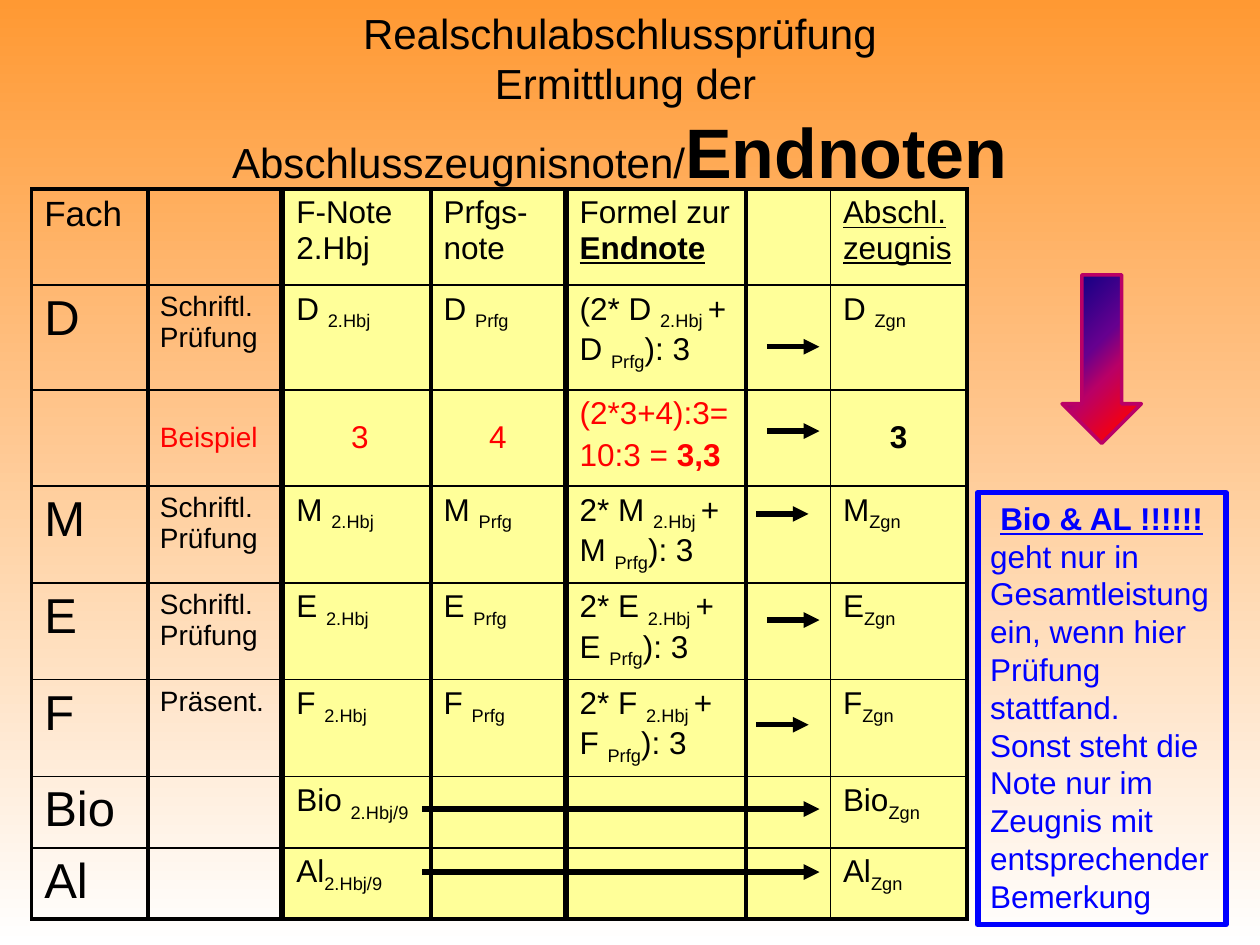
from dataclasses import dataclass, field

from lxml import etree
from pptx import Presentation
from pptx.dml import color as dml
from pptx.enum import shapes, text
from pptx.oxml import ns
from pptx.util import Cm, Pt


@dataclass(frozen=True)
class Theme:
    """Colours, type sizes and line widths of the slide."""
    font: str = "Arial"
    ink: str = "000000"
    example: str = "FF0000"
    note: str = "0000FF"
    cell: str = "FFFF99"
    arrow_edge: str = "BA0066"
    sky: tuple = ((0, "FF9933"), (100, "FFFFFF"))
    fire: tuple = ((0, "000082"), (42, "66008F"), (59, "BA0066"), (90, "FF0000"), (100, "FF8200"))
    title: int = 24
    title_big: int = 40
    subject: int = 28
    heading: int = 20
    body: int = 18
    exam: int = 16
    frame: float = 2.25
    grid: float = 1
    flow: float = 3


THEME = Theme()


@dataclass(frozen=True)
class Box:
    """A region measured in centimetres."""
    left: float
    top: float
    width: float
    height: float

    def lengths(self):
        """Return the four sides as lengths."""
        return Cm(self.left), Cm(self.top), Cm(self.width), Cm(self.height)


@dataclass(frozen=True)
class Entry:
    """Text of one cell; parts between underscores get the emphasis."""
    content: str = ""
    size: int = THEME.body
    color: str = THEME.ink
    centred: bool = False
    middle: bool = False
    bold: bool = False
    underline: bool = False
    emphasis: dict = field(default_factory=lambda: {"subscript": True})


def rgb(value):
    """Turn a hex string into a colour."""
    return dml.RGBColor.from_string(value)


def style(font, size, color, bold=False, underline=False):
    """Set the face, size and colour of a font."""
    font.name, font.size, font.bold, font.underline = THEME.font, Pt(size), bold, underline
    font.color.rgb = rgb(color)


def paint_gradient(fill, stops, angle):
    """Fill with a linear gradient running clockwise at the angle."""
    fill.gradient()
    fill.gradient_angle = 360 - angle
    stop_list = fill._fill._gradFill.find(ns.qn("a:gsLst"))
    for old in list(stop_list):
        stop_list.remove(old)
    for position, value in stops:
        stop = etree.SubElement(stop_list, ns.qn("a:gs"), pos=str(position * 1000))
        etree.SubElement(stop, ns.qn("a:srgbClr"), val=value)


def add_border(cell, side, width):
    """Draw one side of a cell."""
    line = etree.SubElement(cell._tc.get_or_add_tcPr(), ns.qn(f"a:ln{side}"), w=str(Pt(width)))
    fill = etree.SubElement(line, ns.qn("a:solidFill"))
    etree.SubElement(fill, ns.qn("a:srgbClr"), val=THEME.ink)


def write_entry(cell, entry):
    """Write the paragraphs and emphasised runs of an entry into a cell."""
    if entry.middle:
        cell.vertical_anchor = text.MSO_ANCHOR.MIDDLE
    frame = cell.text_frame
    for number, content in enumerate(entry.content.split("\n")):
        paragraph = frame.add_paragraph() if number else frame.paragraphs[0]
        paragraph.alignment = text.PP_ALIGN.CENTER if entry.centred else text.PP_ALIGN.LEFT
        paragraph.space_before = Pt(entry.size * 0.2)
        style(paragraph.font, entry.size, entry.color, entry.bold, entry.underline)
        for index, part in enumerate(content.split("_")):
            for line_number, line in enumerate(part.split("\v")):
                if line_number:
                    paragraph.add_line_break()
                if not line:
                    continue
                run = paragraph.add_run()
                run.text = line
                style(run.font, entry.size, entry.color, entry.bold, entry.underline)
                if index % 2:
                    run.font.bold = entry.emphasis.get("bold", entry.bold)
                    run.font.underline = entry.emphasis.get("underline", entry.underline)
                    if "subscript" in entry.emphasis:
                        run._r.get_or_add_rPr().set("baseline", "-25000")


def add_grades(slide, box, widths, heights, columns, color=None):
    """Add a framed table from columns of entries."""
    table = slide.shapes.add_table(len(heights), len(widths), *box.lengths()).table
    table.first_row = table.horz_banding = False
    for row, height in zip(table.rows, heights):
        row.height = Cm(height)
    last_column, last_row = len(widths) - 1, len(heights) - 1
    for x, (width, entries) in enumerate(zip(widths, columns)):
        table.columns[x].width = Cm(width)
        for y, entry in enumerate(entries):
            cell = table.cell(y, x)
            write_entry(cell, entry)
            outer = {"L": x == 0, "R": x == last_column, "T": y == 0, "B": y == last_row}
            for side, is_outer in outer.items():
                add_border(cell, side, THEME.frame if is_outer else THEME.grid)
            if color:
                cell.fill.solid()
                cell.fill.fore_color.rgb = rgb(color)
            else:
                cell.fill.background()


def add_grade_region(slide, box):
    """Place the tables from subject to certificate side by side."""
    heights = [1.94, 2.11, 1.94, 1.95, 1.95, 1.95, 1.44, 1.44]
    examined = ["M", "E", "F"]
    empty = Entry()
    bold = {"bold": True}
    subjects = [Entry("Fach", THEME.heading)] + [
        Entry(name, THEME.subject) for name in ["D", "", *examined, "Bio", "Al"]]
    written = Entry("Schriftl.Prüfung", THEME.exam)
    exams = [empty, written, Entry("Beispiel", THEME.exam, THEME.example, middle=True),
             written, written, Entry("Präsent.", THEME.exam), empty, empty]

    def sample(grade, color=THEME.example, heavy=False):
        """Return the centred grade of the example row."""
        return Entry(grade, color=color, centred=True, middle=True, bold=heavy)

    half_year = [Entry("F-Note\v2.Hbj"), Entry("D _2.Hbj_"), sample("3"),
                 *(Entry(f"{name} _2.Hbj_") for name in examined),
                 Entry("Bio _2.Hbj/9_"), Entry("Al_2.Hbj/9_")]
    exam_grades = [Entry("Prfgs-note"), Entry("D _Prfg_"), sample("4"),
                   *(Entry(f"{name} _Prfg_") for name in examined), empty, empty]
    formulas = [Entry("Formel zur _Endnote_", emphasis={"bold": True, "underline": True}),
                Entry("(2* D _2.Hbj _+ D _Prfg_): 3"),
                Entry("(2*3+4):3=\n10:3 = _3,3_", color=THEME.example, emphasis=bold),
                *(Entry(f"2* {name} _2.Hbj _+ {name} _Prfg_): 3") for name in examined),
                empty, empty]
    certificate = [Entry("Abschl.zeugnis", underline=True), Entry("D _Zgn_"),
                   sample("3", THEME.ink, True),
                   *(Entry(f"{name}_Zgn_") for name in [*examined, "Bio", "Al"])]
    tables = [
        (0, [2.34], [subjects], None),
        (2.33, [2.69], [exams], None),
        (5.08, [3.07], [half_year], THEME.cell),
        (8.05, [2.69], [exam_grades], THEME.cell),
        (10.79, [3.66], [formulas], THEME.cell),
        (14.4, [1.7, 2.75], [[empty] * len(heights), certificate], THEME.cell),
    ]
    for offset, widths, columns, color in tables:
        area = Box(box.left + offset, box.top, sum(widths), box.height)
        add_grades(slide, area, widths, heights, columns, color)


def add_flow_arrows(slide, box):
    """Draw the arrows that lead from the grades to the certificate."""
    flows = [(14.82, 15.88, 3.18), (14.82, 15.88, 4.88), (14.61, 15.66, 6.55),
             (14.82, 15.88, 8.69), (14.61, 15.66, 10.8),
             (7.87, 15.88, 12.5), (7.87, 15.88, 13.77)]
    for start, end, height in flows:
        y = Cm(box.top + height)
        flow = slide.shapes.add_connector(shapes.MSO_CONNECTOR.STRAIGHT,
                                          Cm(box.left + start), y, Cm(box.left + end), y)
        flow.line.width = Pt(THEME.flow)
        flow.line.color.rgb = rgb(THEME.ink)
        etree.SubElement(flow.line._get_or_add_ln(), ns.qn("a:tailEnd"), type="triangle")
        etree.SubElement(flow._element.spPr, ns.qn("a:effectLst"))


def add_title(slide, box):
    """Place and format the title."""
    title = slide.shapes.title
    title.left, title.top, title.width, title.height = box.lengths()
    frame = title.text_frame
    frame.auto_size = text.MSO_AUTO_SIZE.NONE
    frame.vertical_anchor = text.MSO_ANCHOR.MIDDLE
    paragraph = frame.paragraphs[0]
    paragraph.alignment = text.PP_ALIGN.CENTER
    for content, size, bold in [("Realschulabschlussprüfung", THEME.title, False),
                                (" Ermittlung der Abschlusszeugnisnoten/", THEME.title, False),
                                ("Endnoten", THEME.title_big, True)]:
        run = paragraph.add_run()
        run.text = content
        style(run.font, size, THEME.ink, bold)
        if content == "Realschulabschlussprüfung":
            paragraph.add_line_break()


def add_note(slide, box):
    """Add the framed remark and the arrow pointing down at it."""
    remark = slide.shapes.add_shape(shapes.MSO_SHAPE.RECTANGLE, Cm(box.left),
                                    Cm(box.top + 4.39), Cm(box.width), Cm(box.height - 4.39))
    remark.shadow.inherit = False
    remark.fill.background()
    remark.line.color.rgb = rgb(THEME.note)
    remark.line.width = Pt(3.25)
    frame = remark.text_frame
    frame.word_wrap = True
    frame.auto_size = text.MSO_AUTO_SIZE.SHAPE_TO_FIT_TEXT
    frame.vertical_anchor = text.MSO_ANCHOR.TOP
    lines = ["Bio & AL !!!!!!",
             "geht nur in Gesamtleistung ein, wenn hier Prüfung stattfand.",
             "Sonst steht die Note nur im Zeugnis mit entsprechender Bemerkung"]
    for number, line in enumerate(lines):
        paragraph = frame.add_paragraph() if number else frame.paragraphs[0]
        paragraph.text = line
        paragraph.alignment = text.PP_ALIGN.LEFT if number else text.PP_ALIGN.CENTER
        style(paragraph.font, THEME.body, THEME.note, number == 0, number == 0)
    pointer = slide.shapes.add_shape(shapes.MSO_SHAPE.DOWN_ARROW, Cm(box.left + 1.7),
                                     Cm(box.top), Cm(1.6), Cm(3.4))
    pointer.shadow.inherit = False
    paint_gradient(pointer.fill, THEME.fire, 45)
    pointer.line.color.rgb = rgb(THEME.arrow_edge)
    pointer.line.width = Pt(2)


def main():
    """Build and save the slide."""
    deck = Presentation()
    deck.slide_width, deck.slide_height = Cm(25.4), Cm(19.05)
    slide = deck.slides.add_slide(deck.slide_layouts[5])
    paint_gradient(slide.background.fill, THEME.sky, 90)
    grades = Box(0.64, 3.81, 18.85, 14.72)
    add_title(slide, Box(1.7, 0.42, 21.59, 3.18))
    add_grade_region(slide, grades)
    add_flow_arrows(slide, grades)
    add_note(slide, Box(19.71, 5.54, 5, 13.1))
    deck.save("out.pptx")


if __name__ == "__main__":
    main()
